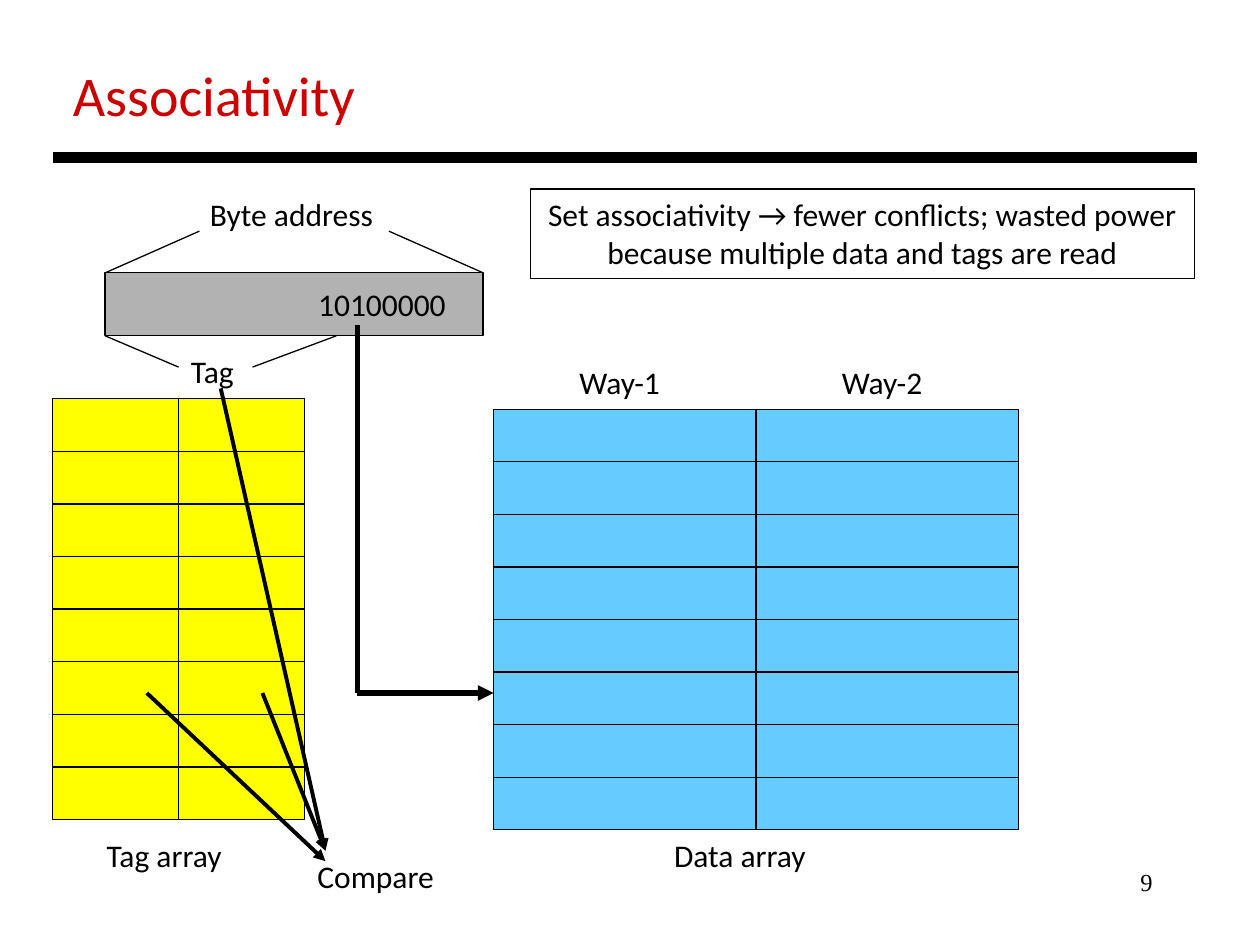
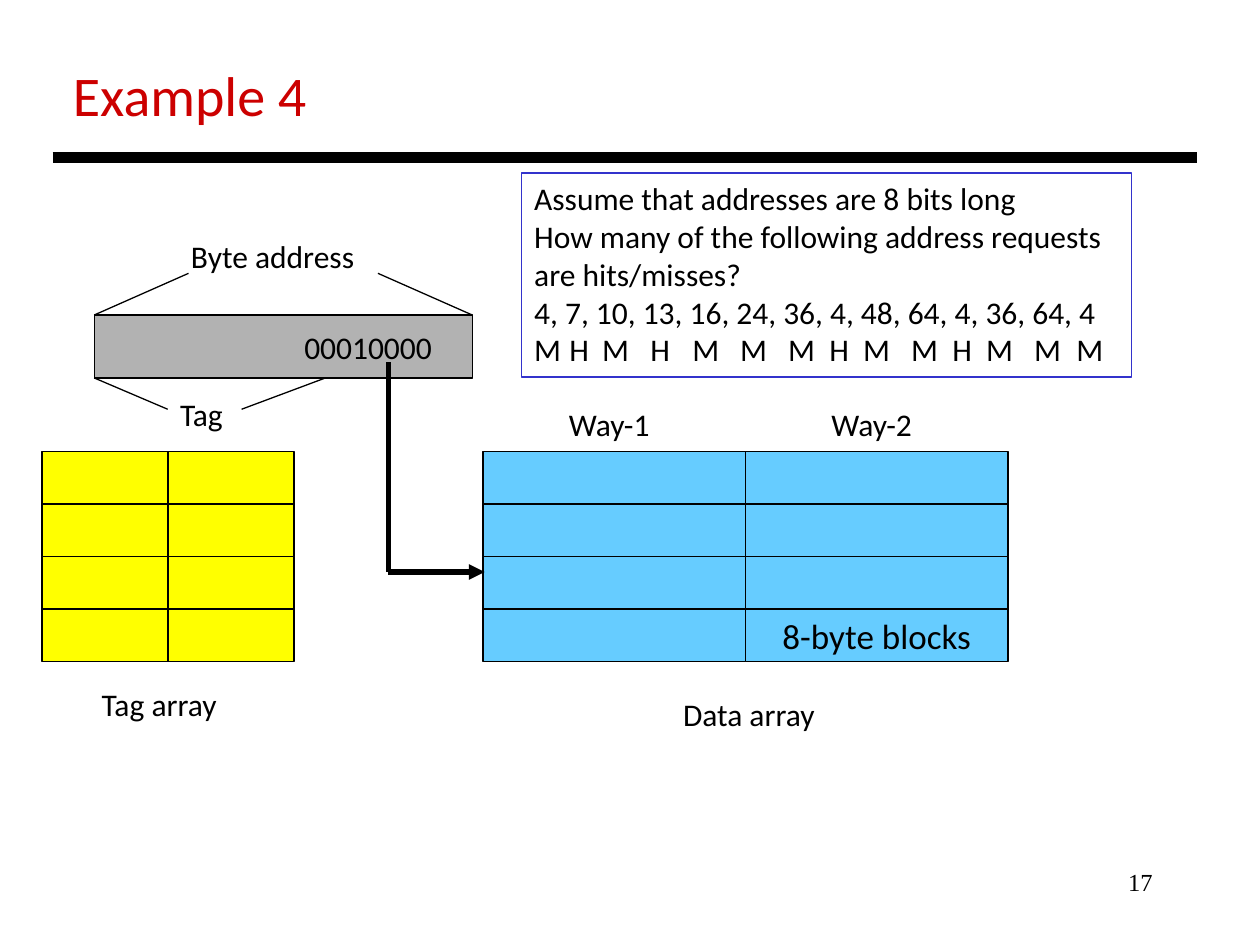
from pptx import Presentation
from pptx.dml.color import RGBColor
from pptx.enum.shapes import MSO_CONNECTOR, MSO_SHAPE
from pptx.enum.text import MSO_ANCHOR, PP_ALIGN
from pptx.oxml.ns import qn
from pptx.util import Cm, Pt
from lxml.etree import SubElement

COLORS = {"text": "000000", "title": "CC0000", "data": "66CCFF", "tag": "FFFF00",
          "address": "B2B2B2", "question": "3333CC"}
ROW_HEIGHT = 1.06
TAG_WIDTH, DATA_WIDTH = 2.54, 5.29
ADDRESS_WIDTH, ADDRESS_HEIGHT = 7.62, 1.27
ANSWER_TABS = [0.71, 1.37, 2.34, 3.19, 4.15, 5.12, 5.95,
               6.63, 7.6, 8.43, 9.11, 10.08, 10.93]


def rgb(name):
    return RGBColor.from_string(COLORS[name])


class CacheDeck:
    """Holds the shared style and the slide being drawn; lengths are in cm."""

    def __init__(self):
        self.presentation = Presentation()
        self.presentation.slide_width = Cm(25.4)
        self.presentation.slide_height = Cm(19.05)
        self.slide = None

    def start_slide(self, title, title_width, number):
        self.slide = self.presentation.slides.add_slide(
            self.presentation.slide_layouts[6])
        self.text(18.2, 17.36, 5.29, [str(number)], height=1.27, size=14,
                  font="Times New Roman", align=PP_ALIGN.RIGHT)
        self.text(1.22, 1.09, title_width, [title], height=1.63, size=32,
                  color="title")
        self.line((1.06, 3.18), (24.13, 3.18), 6)

    def fill_text(self, shape, lines, size=18, color="text", font="Calibri",
                  align=PP_ALIGN.LEFT):
        frame = shape.text_frame
        frame.word_wrap = False
        for index, line in enumerate(lines):
            paragraph = frame.add_paragraph() if index else frame.paragraphs[0]
            paragraph.alignment = align
            run = paragraph.add_run()
            run.text = line
            run.font.size = Pt(size)
            run.font.name = font
            run.font.color.rgb = rgb(color)
        return frame

    def text(self, left, top, width, lines, height=1.02, outline=None, **style):
        shape = self.slide.shapes.add_textbox(Cm(left), Cm(top), Cm(width), Cm(height))
        if outline:
            shape.line.color.rgb = rgb(outline)
            shape.line.width = Pt(0.75)
        return self.fill_text(shape, lines, **style)

    def rectangle(self, left, top, width, height, fill):
        shape = self.slide.shapes.add_shape(
            MSO_SHAPE.RECTANGLE, Cm(left), Cm(top), Cm(width), Cm(height))
        shape.shadow.inherit = False
        shape.fill.solid()
        shape.fill.fore_color.rgb = rgb(fill)
        shape.line.color.rgb = rgb("text")
        shape.line.width = Pt(0.75)
        shape.text_frame.vertical_anchor = MSO_ANCHOR.MIDDLE
        return shape

    def line(self, start, end, width=0.75, arrow=False):
        connector = self.slide.shapes.add_connector(
            MSO_CONNECTOR.STRAIGHT, *map(Cm, start + end))
        connector.line.color.rgb = rgb("text")
        connector.line.width = Pt(width)
        properties = connector.element.spPr
        if arrow:
            SubElement(properties.find(qn("a:ln")), qn("a:tailEnd"), type="triangle")
        SubElement(properties, qn("a:effectLst"))

    def grid(self, left, top, rows, column_width, fill):
        """Draws a two-way array and returns its last cell."""
        for column in range(2):
            for row in range(rows):
                cell = self.rectangle(left + column * column_width,
                                      top + row * ROW_HEIGHT,
                                      column_width, ROW_HEIGHT, fill)
        return cell

    def address(self, left, top, bits, label_left, right_inset):
        bar = self.rectangle(left, top, ADDRESS_WIDTH, ADDRESS_HEIGHT, "address")
        frame = self.fill_text(bar, [bits], align=PP_ALIGN.RIGHT)
        frame.word_wrap = True
        frame.margin_right = Cm(right_inset)
        self.text(label_left, top - 1.69, 3.84, ["Byte address"])
        self.text(left + 1.48, top + 1.48, 1.4, ["Tag"])
        # Leader lines from the labels to the bar
        bottom = top + ADDRESS_HEIGHT
        self.line((left + 1.9, top - 0.84), (left, top))
        self.line((left + 5.72, top - 0.84), (left + ADDRESS_WIDTH, top))
        self.line((left, bottom), (left + 1.48, top + 1.9))
        self.line((left + 2.97, top + 1.9), (left + 4.66, bottom))

    def cache(self, left, tag_top, data_top, rows):
        """Draws the tag and data arrays, returns the last data cell."""
        self.grid(left, tag_top, rows, TAG_WIDTH, "tag")
        data_left = left + 8.89
        last_cell = self.grid(data_left, data_top, rows, DATA_WIDTH, "data")
        for way in range(2):
            self.text(data_left + 1.48 + way * DATA_WIDTH, data_top - 1.06, 2.16,
                      [f"Way-{way + 1}"])
        return last_cell

    def captions(self, tag_position, data_position):
        self.text(*tag_position, 2.84, ["Tag array"])
        self.text(*data_position, 3.2, ["Data array"])

    def index_pointer(self, start, corner_y, end_x):
        corner = (start[0], corner_y)
        self.line(start, corner, 3)
        self.line(corner, (end_x, corner_y), 3, arrow=True)


def build_associativity(deck):
    deck.start_slide("Associativity", 6.27, 9)
    deck.address(2.12, 5.5, "10100000", 3.98, 0.75)
    deck.cache(1.06, 8.04, 8.25, 8)
    deck.captions((1.9, 16.72), (13.34, 16.72))
    deck.index_pointer((7.2, 6.56), 13.97, 9.95)
    deck.text(10.69, 3.81, 13.39,
              ["Set associativity → fewer conflicts; wasted power",
               "because multiple data and tags are read"],
              height=1.8, outline="text", align=PP_ALIGN.CENTER)
    # Tag comparison
    for start, end in [((2.96, 13.97), (6.56, 17.36)),
                       ((5.29, 13.97), (6.56, 17.15)),
                       ((4.45, 7.83), (6.56, 17.15))]:
        deck.line(start, end, 2.25, arrow=True)
    deck.text(6.15, 17.15, 2.9, ["Compare"])


def build_example(deck):
    deck.start_slide("Example 4", 5.26, 17)
    deck.address(1.9, 6.35, "00010000", 3.6, 0.81)
    last_cell = deck.cache(0.85, 9.1, 9.1, 4)
    deck.fill_text(last_cell, ["8-byte blocks"], size=20, align=PP_ALIGN.CENTER)
    deck.captions((1.8, 13.68), (13.52, 13.89))
    deck.index_pointer((7.83, 7.3), 11.53, 9.77)
    # Question, with the answers set on tab stops
    question = deck.text(
        10.52, 3.49, 12.29,
        ["Assume that addresses are 8 bits long",
         "How many of the following address requests",
         "are hits/misses?",
         "4, 7, 10, 13, 16, 24, 36, 4, 48, 64, 4, 36, 64, 4",
         "\t".join("MHMHMMMHMMHMMM")],
        height=4.11, outline="question")
    properties = question.paragraphs[-1]._p.get_or_add_pPr()
    tab_list = SubElement(properties, qn("a:tabLst"))
    for position in ANSWER_TABS:
        SubElement(tab_list, qn("a:tab"), pos=str(int(Cm(position))), algn="l")


def main():
    deck = CacheDeck()
    build_associativity(deck)
    build_example(deck)
    deck.presentation.save("out.pptx")


if __name__ == "__main__":
    main()
